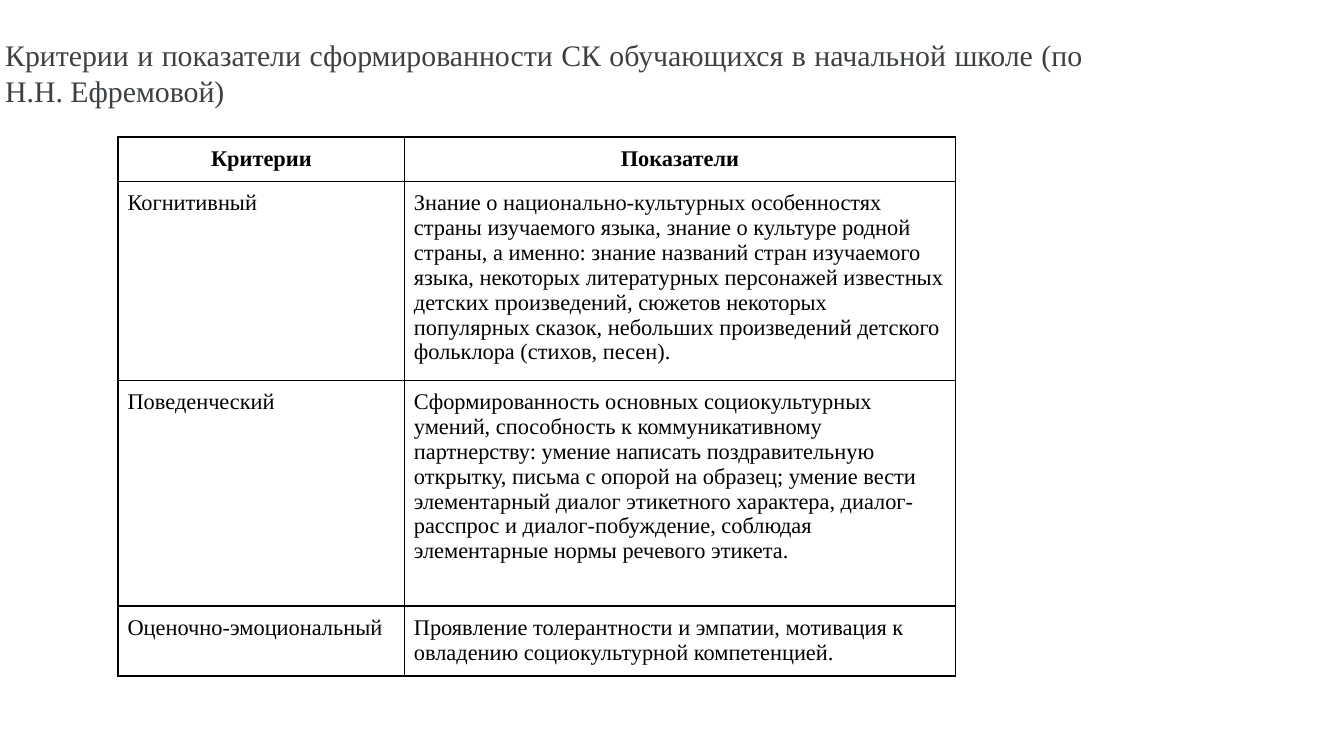
from lxml import etree
from pptx import Presentation
from pptx import util as u
from pptx.dml.color import RGBColor
from pptx.enum import text
from pptx.oxml.ns import qn

FONT = "Times New Roman"
COLUMN_WIDTHS = [2.13, 4.1]
ROW_HEIGHTS = [0.33, 1.48, 1.68, 0.52]
CRITERIA = [
    ("Критерии", "Показатели"),
    ("Когнитивный",
     "Знание о национально-культурных особенностях страны изучаемого языка, "
     "знание о культуре родной страны, а именно: знание названий стран изучаемого "
     "языка, некоторых литературных персонажей известных детских произведений, "
     "сюжетов некоторых популярных сказок, небольших произведений детского "
     "фольклора (стихов, песен)."),
    ("Поведенческий",
     "Сформированность основных социокультурных умений, способность к "
     "коммуникативному партнерству: умение написать поздравительную открытку, "
     "письма с опорой на образец; умение вести элементарный диалог этикетного "
     "характера, диалог-расспрос и диалог-побуждение, соблюдая элементарные нормы "
     "речевого этикета."),
    ("Оценочно-эмоциональный",
     "Проявление толерантности и эмпатии, мотивация к овладению "
     "социокультурной компетенцией."),
]


def style(paragraph, size, color, align, bold=False):
    """Set the font and alignment of a paragraph."""
    paragraph.alignment = align
    font = paragraph.font
    font.name, font.size, font.bold = FONT, u.Pt(size), bold
    font.color.rgb = RGBColor.from_string(color)


def set_borders(cell, color, width):
    """Draw a solid line on all four sides of a cell."""
    properties = cell._tc.get_or_add_tcPr()
    for position, side in enumerate(("lnL", "lnR", "lnT", "lnB")):
        line = etree.Element(qn(f"a:{side}"), w=str(u.Pt(width)))
        fill = etree.SubElement(line, qn("a:solidFill"))
        etree.SubElement(fill, qn("a:srgbClr"), val=color)
        properties.insert(position, line)


def add_heading(slide, left, top, width, height):
    """Add the heading, centred vertically in its box."""
    frame = slide.shapes.add_textbox(*map(u.Inches, (left, top, width, height))).text_frame
    frame.word_wrap = True
    frame.vertical_anchor = text.MSO_ANCHOR.MIDDLE
    frame.margin_left = frame.margin_right = u.Inches(0.1)
    frame.margin_top = frame.margin_bottom = u.Inches(0.1)
    heading = frame.paragraphs[0]
    heading.text = ("Критерии и показатели сформированности СК обучающихся "
                    "в начальной школе (по Н.Н. Ефремовой)")
    style(heading, 16, "3C4043", text.PP_ALIGN.JUSTIFY)


def add_criteria(slide, left, top):
    """Add the table of criteria with its top left corner at the given point."""
    box = (left, top, sum(COLUMN_WIDTHS), sum(ROW_HEIGHTS))
    table = slide.shapes.add_table(
        len(CRITERIA), len(COLUMN_WIDTHS), *map(u.Inches, box)).table
    table.first_row = table.horz_banding = False
    for column, width in zip(table.columns, COLUMN_WIDTHS):
        column.width = u.Inches(width)
    for index, (row, height, entries) in enumerate(zip(table.rows, ROW_HEIGHTS, CRITERIA)):
        row.height = u.Inches(height)
        header = index == 0
        align = text.PP_ALIGN.CENTER if header else text.PP_ALIGN.LEFT
        for cell, entry in zip(row.cells, entries):
            cell.text = entry
            cell.margin_left = cell.margin_right = u.Inches(0.07)
            cell.margin_top = cell.margin_bottom = u.Inches(0.07)
            cell.fill.background()
            set_borders(cell, "000000", 1)
            style(cell.text_frame.paragraphs[0], 12, "000000", align, header)


def main():
    """Build the slide and save it."""
    deck = Presentation()
    deck.slide_width = u.Inches(10)
    deck.slide_height = deck.slide_width * 9 // 16
    slide = deck.slides.add_slide(deck.slide_layouts[6])
    add_criteria(slide, 0.88, 1.02)
    add_heading(slide, -0.06, 0.12, 8.22, 0.84)
    deck.save("out.pptx")


if __name__ == "__main__":
    main()
